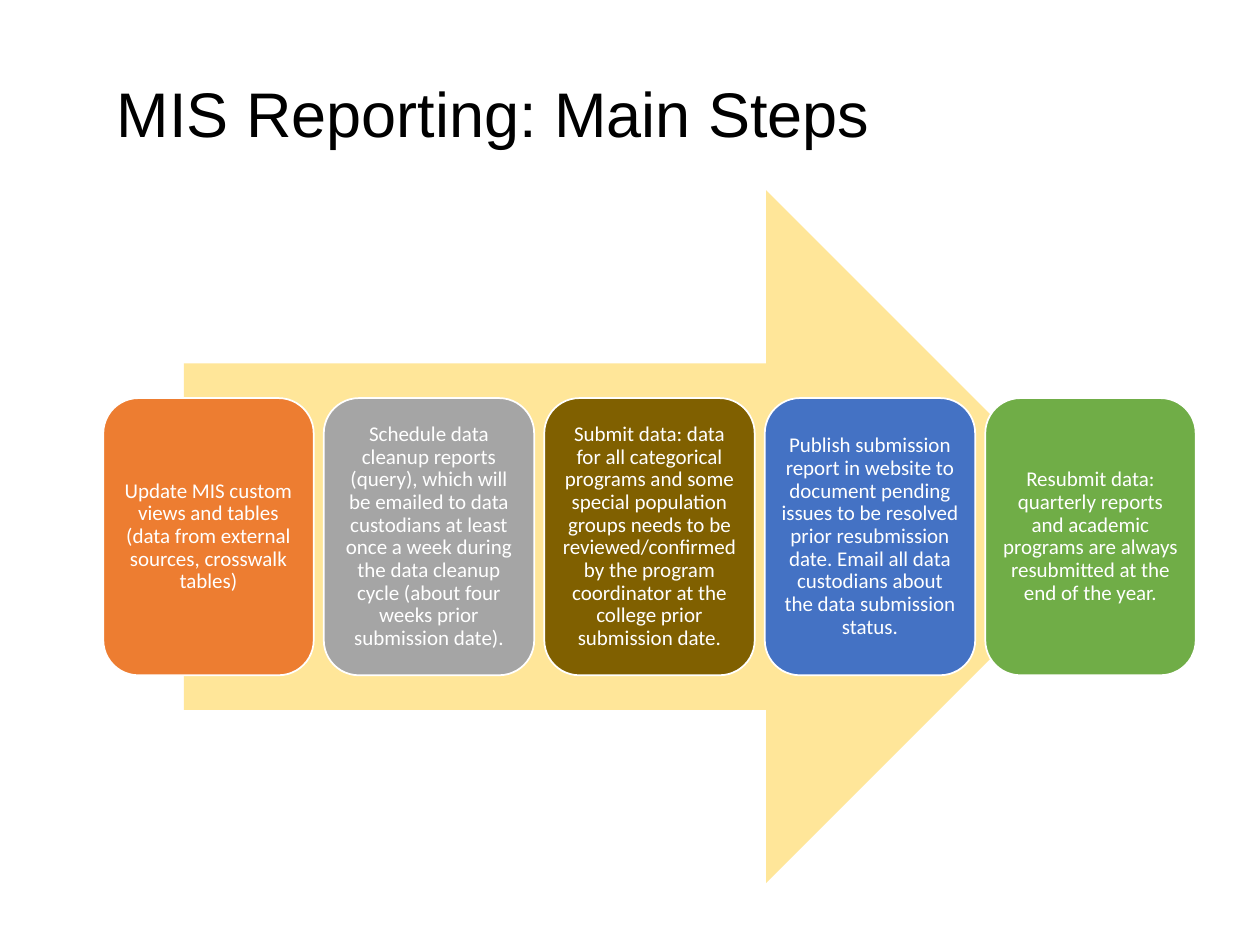
"""Build the slide listing the main steps of MIS reporting."""
from pptx import Presentation
from pptx.dml.color import RGBColor
from pptx.enum.shapes import MSO_SHAPE as Shape
from pptx.enum.text import MSO_ANCHOR as Anchor, PP_ALIGN as Align
from pptx.util import Inches, Pt

COLORS = {
    "arrow": "FFE699", "white": "FFFFFF", "black": "000000",
    "orange": "ED7D31", "gray": "A5A5A5", "brown": "806000",
    "blue": "4472C4", "green": "70AD47",
}
TITLE = "MIS Reporting: Main Steps"
STEPS = [
    ("orange", "Update MIS custom views and tables (data from external sources, "
               "crosswalk tables)"),
    ("gray", "Schedule data cleanup reports (query), which will be emailed to data "
             "custodians at least once a week during the data cleanup cycle "
             "(about four weeks prior submission date)."),
    ("brown", "Submit data: data for all categorical programs and some special "
              "population groups needs to be reviewed/confirmed by the program "
              "coordinator at the college prior submission date."),
    ("blue", "Publish submission report in website to document pending issues to be "
             "resolved prior resubmission date. Email all data custodians about the "
             "data submission status."),
    ("green", "Resubmit data: quarterly reports and academic programs are always "
              "resubmitted at the end of the year."),
]
STEP_LEFT, STEP_TOP, STEP_WIDTH, STEP_HEIGHT = 0.82, 3.16, 1.67, 2.2
STEP_PITCH = 1.75


def color(name):
    return RGBColor.from_string(COLORS[name])


def add_block(slide, preset, box, fill):
    block = slide.shapes.add_shape(preset, *map(Inches, box))
    block.shadow.inherit = False
    block.fill.solid()
    block.fill.fore_color.rgb = color(fill)
    return block


def write(shape, words, font, size, ink, align, anchor):
    frame = shape.text_frame
    frame.word_wrap = True
    frame.vertical_anchor = anchor
    frame.text = words
    paragraph = frame.paragraphs[0]
    paragraph.alignment = align
    paragraph.line_spacing = 0.9
    style = paragraph.runs[0].font
    style.name, style.size = font, Pt(size)
    style.color.rgb = color(ink)
    return frame


def main():
    deck = Presentation()
    deck.slide_width, deck.slide_height = Inches(10), Inches(7.5)
    slide = deck.slides.add_slide(deck.slide_layouts[6])

    arrow = add_block(slide, Shape.RIGHT_ARROW, (1.46, 1.51, 7.37, 5.5), "arrow")
    arrow.line.fill.background()

    for index, (fill, words) in enumerate(STEPS):
        box = (STEP_LEFT + index * STEP_PITCH, STEP_TOP, STEP_WIDTH, STEP_HEIGHT)
        step = add_block(slide, Shape.ROUNDED_RECTANGLE, box, fill)
        step.line.color.rgb = color("white")
        step.line.width = Pt(1)
        frame = write(step, words, "Calibri", 12, "white", Align.CENTER, Anchor.MIDDLE)
        frame.margin_left = frame.margin_right = Inches(0.05)
        frame.margin_top = frame.margin_bottom = Inches(0.05)

    title = slide.shapes.add_textbox(*map(Inches, (0.83, 0.49, 8.62, 0.76)))
    write(title, TITLE, "Arial", 36, "black", Align.LEFT, Anchor.BOTTOM)

    deck.save("out.pptx")


if __name__ == "__main__":
    main()
